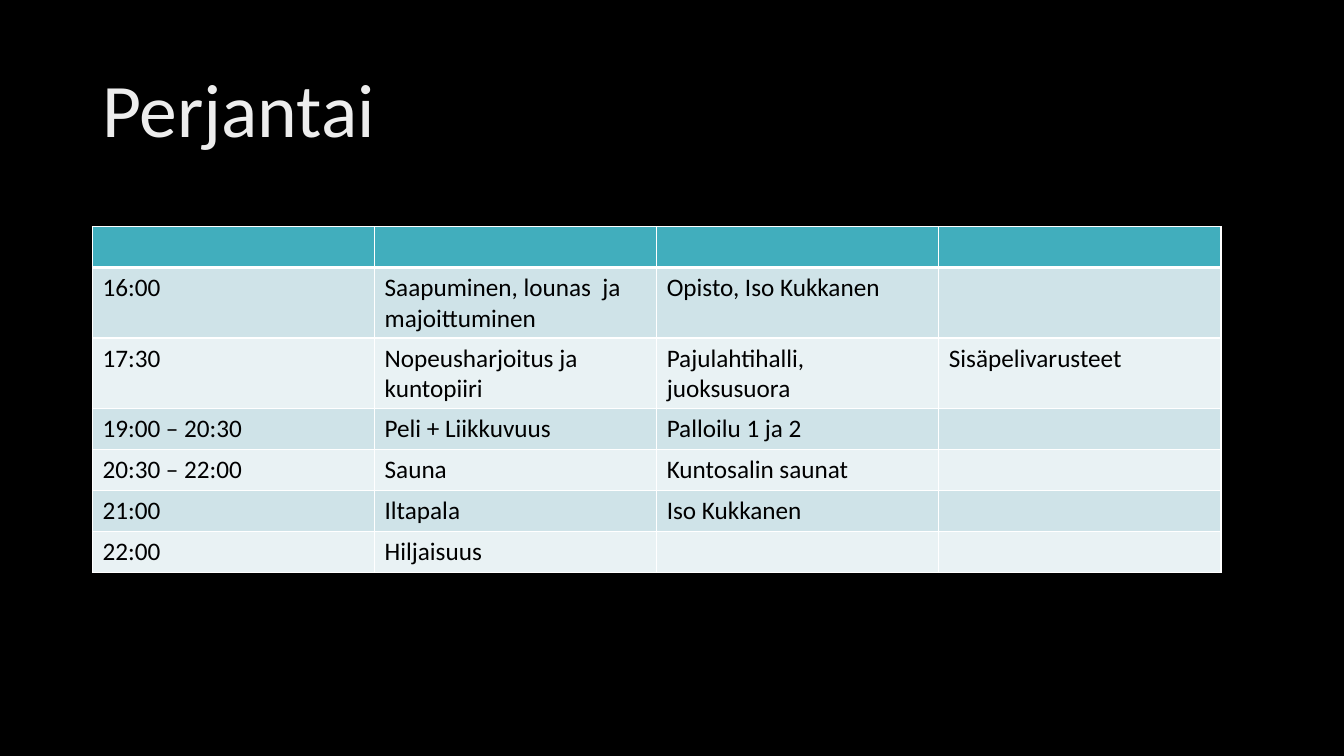
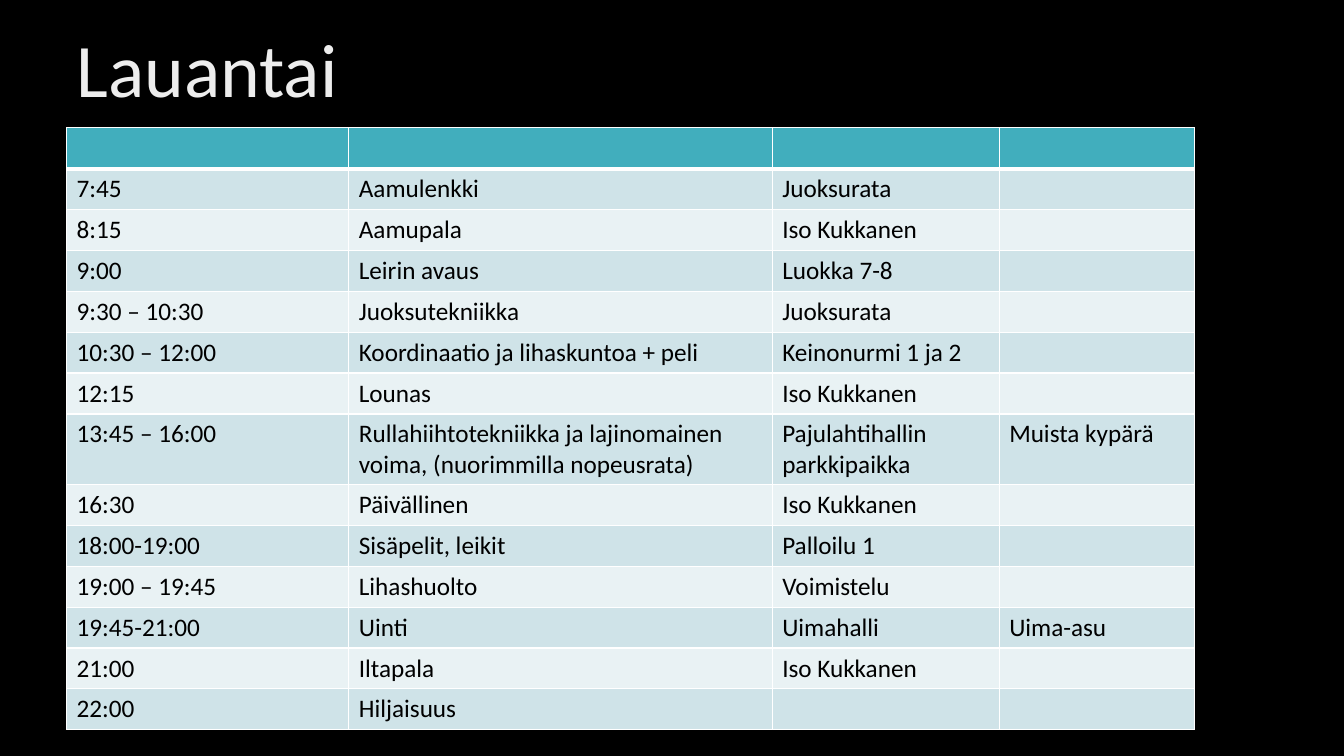
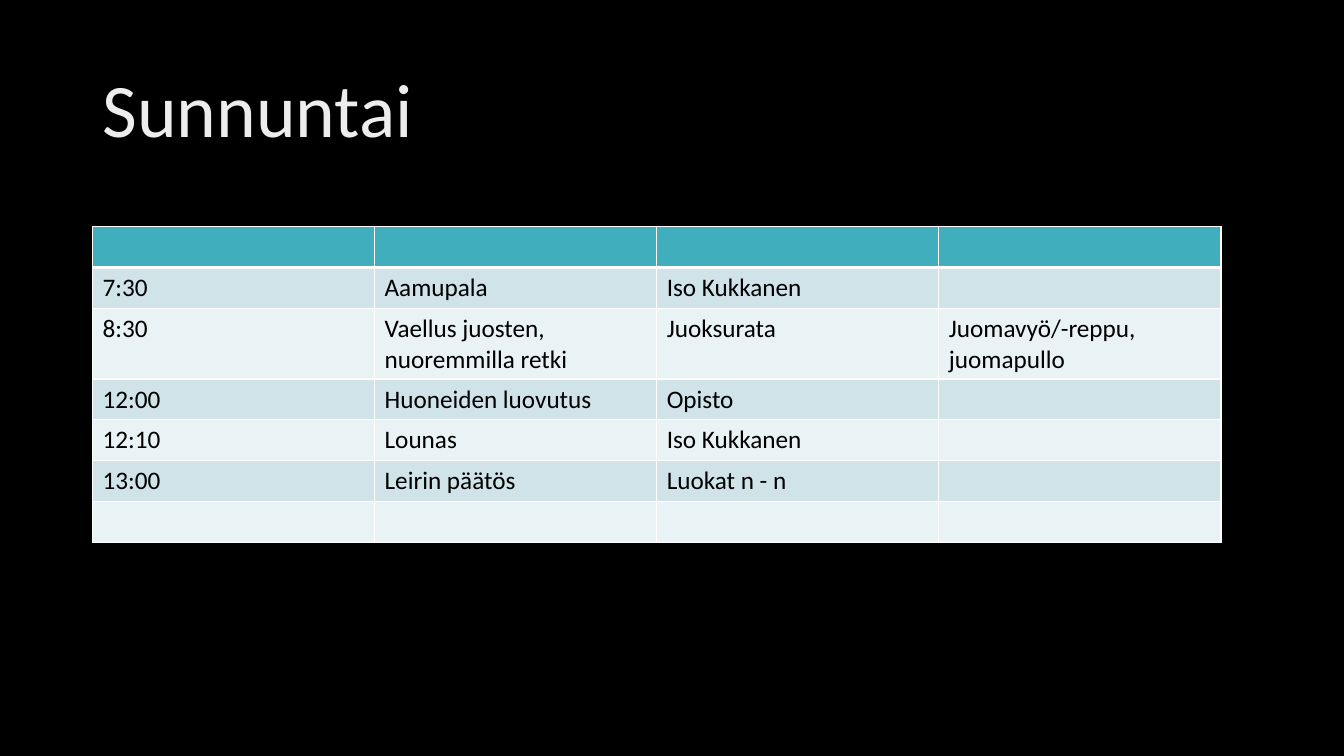
from dataclasses import dataclass

from lxml import etree
from pptx import Presentation
from pptx import util as u
from pptx.dml.color import RGBColor
from pptx.enum import text
from pptx.oxml.ns import qn

Cm, Pt = u.Cm, u.Pt


@dataclass(frozen=True)
class Theme:
    font: str = "Calibri"
    title_size: int = 54
    cell_size: int = 18
    background: str = "000000"
    title: str = "EDEDED"
    cell_text: str = "000000"
    header: str = "41AEBD"
    bands: tuple = ("CFE3E8", "E9F2F4")
    border: str = "FFFFFF"
    thin: int = 1
    thick: int = 3


class Deck:
    TITLE_SIZE = (Cm(29.21), Cm(3.68))
    ROW_HEIGHT = Cm(1.03)

    def __init__(self, theme):
        self.theme = theme
        self.prs = Presentation()
        self.prs.slide_width, self.prs.slide_height = Cm(33.87), Cm(19.05)
        self.s = None

    def slide(self):
        self.s = self.prs.slides.add_slide(self.prs.slide_layouts[6])
        fill = self.s.background.fill
        fill.solid()
        fill.fore_color.rgb = RGBColor.from_string(self.theme.background)

    def run(self, p, words, size, color):
        r = p.add_run()
        r.text = words
        r.font.name = self.theme.font
        r.font.size = Pt(size)
        r.font.color.rgb = RGBColor.from_string(color)

    def title(self, words, left, top):
        tf = self.s.shapes.add_textbox(left, top, *self.TITLE_SIZE).text_frame
        tf.word_wrap = True
        tf.vertical_anchor = text.MSO_ANCHOR.MIDDLE
        p = tf.paragraphs[0]
        p.line_spacing = 0.9
        self.run(p, words, self.theme.title_size, self.theme.title)

    def borders(self, cell, top, bottom):
        tc_pr = cell._tc.get_or_add_tcPr()
        thin = self.theme.thin
        for side, width in (("L", thin), ("R", thin), ("T", top), ("B", bottom)):
            ln = etree.SubElement(tc_pr, qn(f"a:ln{side}"), w=str(Pt(width)))
            solid = etree.SubElement(ln, qn("a:solidFill"))
            etree.SubElement(solid, qn("a:srgbClr"), val=self.theme.border)

    def timetable(self, rows, left, top, widths):
        """Add a table with an empty header row above the given rows."""
        t = self.theme
        rows = [()] + rows
        table = self.s.shapes.add_table(
            len(rows), len(widths), left, top,
            sum(widths), self.ROW_HEIGHT * len(rows)).table
        table.horz_banding = False
        for column, width in zip(table.columns, widths):
            column.width = width
        for i, row in enumerate(rows):
            table.rows[i].height = self.ROW_HEIGHT
            color = t.bands[(i - 1) % 2] if i else t.header
            for cell in table.rows[i].cells:
                self.borders(cell, t.thick if i == 1 else t.thin,
                             t.thin if i else t.thick)
                cell.fill.solid()
                cell.fill.fore_color.rgb = RGBColor.from_string(color)
            for j, words in enumerate(row):
                p = table.cell(i, j).text_frame.paragraphs[0]
                self.run(p, words, t.cell_size, t.cell_text)


FRIDAY = [
    ("16:00", "Saapuminen, lounas  ja majoittuminen", "Opisto, Iso Kukkanen"),
    ("17:30", "Nopeusharjoitus ja kuntopiiri", "Pajulahtihalli, juoksusuora",
     "Sisäpelivarusteet"),
    ("19:00 – 20:30", "Peli + Liikkuvuus", "Palloilu 1 ja 2"),
    ("20:30 – 22:00", "Sauna", "Kuntosalin saunat"),
    ("21:00", "Iltapala", "Iso Kukkanen"),
    ("22:00", "Hiljaisuus"),
]
SATURDAY = [
    ("7:45", "Aamulenkki", "Juoksurata"),
    ("8:15", "Aamupala", "Iso Kukkanen"),
    ("9:00", "Leirin avaus", "Luokka 7-8"),
    ("9:30 – 10:30", "Juoksutekniikka", "Juoksurata"),
    ("10:30 – 12:00", "Koordinaatio ja lihaskuntoa + peli", "Keinonurmi 1 ja 2"),
    ("12:15", "Lounas", "Iso Kukkanen"),
    ("13:45 – 16:00",
     "Rullahiihtotekniikka ja lajinomainen voima, (nuorimmilla nopeusrata)",
     "Pajulahtihallin parkkipaikka", "Muista kypärä"),
    ("16:30", "Päivällinen", "Iso Kukkanen"),
    ("18:00-19:00", "Sisäpelit, leikit", "Palloilu 1"),
    ("19:00 – 19:45", "Lihashuolto", "Voimistelu"),
    ("19:45-21:00", "Uinti", "Uimahalli", "Uima-asu"),
    ("21:00", "Iltapala", "Iso Kukkanen"),
    ("22:00", "Hiljaisuus"),
]
SUNDAY = [
    ("7:30", "Aamupala", "Iso Kukkanen"),
    ("8:30", "Vaellus juosten, nuoremmilla retki", "Juoksurata",
     "Juomavyö/-reppu, juomapullo"),
    ("12:00", "Huoneiden luovutus", "Opisto"),
    ("12:10", "Lounas", "Iso Kukkanen"),
    ("13:00", "Leirin päätös", "Luokat n - n"),
    (),
]


def main():
    equal = [Cm(7.11)] * 4
    wide_activity = [Cm(7.11), Cm(10.67), Cm(5.72), Cm(4.92)]
    normal = (Cm(2.33), Cm(1.01), Cm(5.71), equal)
    compact = (Cm(1.68), Cm(0), Cm(3.22), wide_activity)
    days = [
        ("Perjantai", FRIDAY, normal),
        ("Lauantai", SATURDAY, compact),
        ("Sunnuntai", SUNDAY, normal),
    ]
    deck = Deck(Theme())
    for name, rows, (left, title_top, table_top, widths) in days:
        deck.slide()
        deck.title(name, left, title_top)
        deck.timetable(rows, left, table_top, widths)
    deck.prs.save("out.pptx")


if __name__ == "__main__":
    main()
